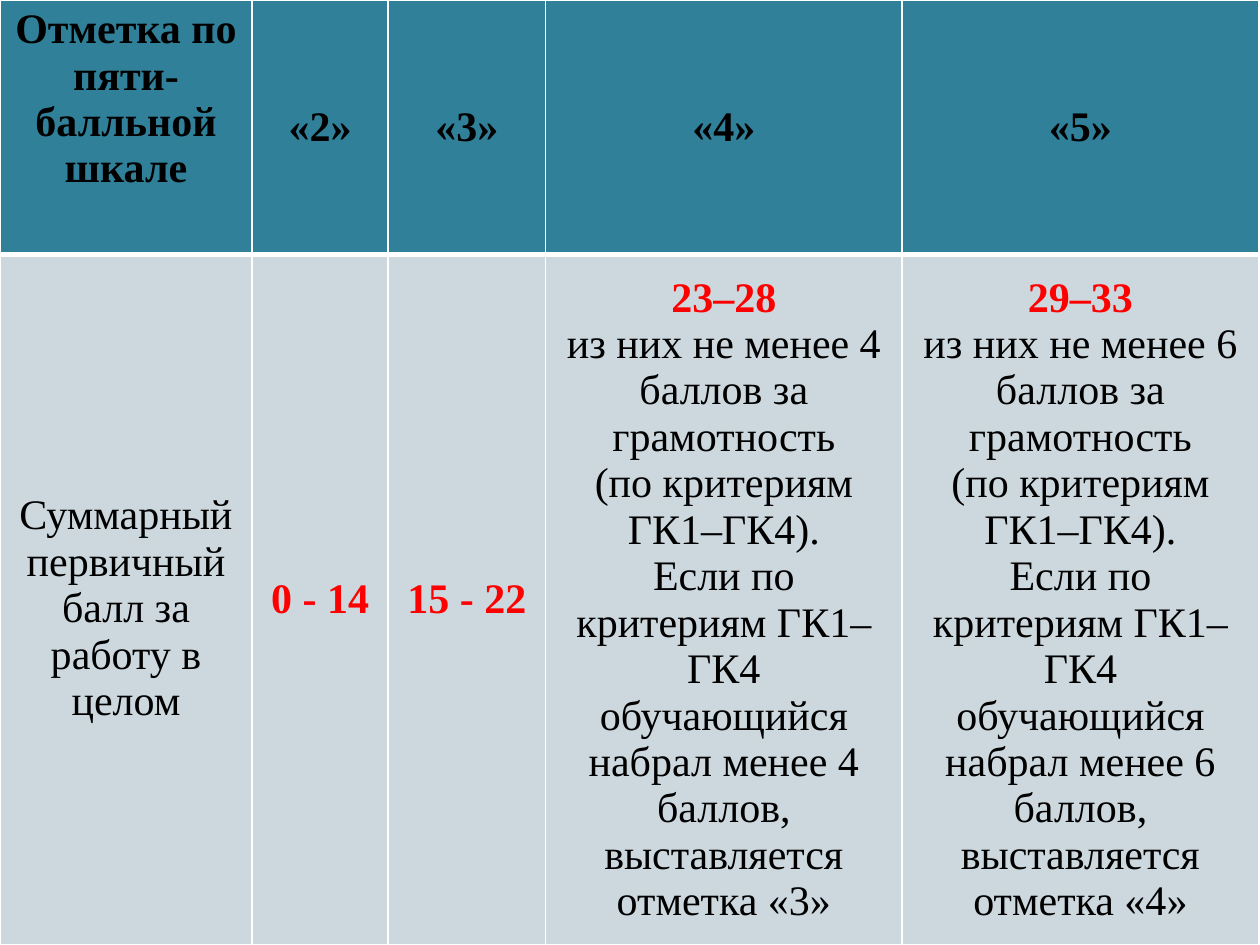
from lxml import etree
from pptx import Presentation
from pptx import util as u
from pptx.dml.color import RGBColor
from pptx.enum import text
from pptx.oxml import ns

BLACK, RED, WHITE = "000000", "FF0000", "FFFFFF"
HEADER_FILL, BODY_FILL = "308099", "CDD8DE"
COLUMNS = [2, 1.08, 1.25, 2.83, 2.83]
ROWS = [2.02, 5.48]


def colour(value):
    return RGBColor.from_string(value)


class GradePage:
    """Holds the table style and the current slide."""

    font, size = "Times New Roman", 24

    def __init__(self, deck):
        self.page = deck.slides.add_slide(deck.slide_layouts[6])

    def table(self, columns, rows):
        frame = self.page.shapes.add_table(
            len(rows), len(columns), 0, 0, u.Inches(sum(columns)), u.Inches(sum(rows))
        )
        table = frame.table
        table.horz_banding = False
        for column, width in zip(table.columns, columns):
            column.width = u.Inches(width)
        for row, height in zip(table.rows, rows):
            row.height = u.Inches(height)
        return table

    def borders(self, cell, **widths):
        properties = cell._tc.get_or_add_tcPr()
        for index, side in enumerate("LRTB"):
            line = etree.Element(ns.qn(f"a:ln{side}"), w=str(u.Pt(widths.get(side, 1))))
            fill = etree.SubElement(line, ns.qn("a:solidFill"))
            etree.SubElement(fill, ns.qn("a:srgbClr"), val=WHITE)
            properties.insert(index, line)

    def cell(self, cell, lines, fill, top=None):
        cell.fill.solid()
        cell.fill.fore_color.rgb = colour(fill)
        if top is None:
            cell.vertical_anchor = text.MSO_ANCHOR.MIDDLE
        else:
            cell.vertical_anchor = text.MSO_ANCHOR.TOP
            cell.margin_top = u.Inches(top)
        frame = cell.text_frame
        for index, (words, ink, bold) in enumerate(lines):
            para = frame.add_paragraph() if index else frame.paragraphs[0]
            para.alignment = text.PP_ALIGN.CENTER
            span = para.add_run()
            span.text = words
            span.font.name, span.font.size = self.font, u.Pt(self.size)
            span.font.bold = bold
            span.font.color.rgb = colour(ink)


def styled(lines, ink=BLACK, bold=False):
    return [(line, ink, bold) for line in lines]


def score(points, minimum, lower_grade):
    return styled([points], RED, True) + styled([
        f"из них не менее {minimum} баллов за грамотность",
        "(по критериям ГК1–ГК4).",
        "Если по критериям ГК1–ГК4",
        f"обучающийся набрал менее {minimum}",
        f"баллов, выставляется отметка «{lower_grade}»",
    ])


def main():
    deck = Presentation()
    deck.slide_width, deck.slide_height = u.Inches(10), u.Inches(7.5)
    page = GradePage(deck)
    table = page.table(COLUMNS, ROWS)

    header = [["Отметка по", "пяти-балльной", "шкале"], ["«2»"], ["«3»"], ["«4»"], ["«5»"]]
    body = [
        styled(["Суммарный", "первичный балл за", "работу в целом"]),
        styled(["0 - 14"], RED, True),
        styled(["15 - 22"], RED, True),
        score("23–28", 4, 3),
        score("29–33", 6, 4),
    ]
    for index, (title, lines) in enumerate(zip(header, body)):
        title_cell, body_cell = table.cell(0, index), table.cell(1, index)
        first = index == 0
        page.cell(title_cell, styled(title, bold=True), HEADER_FILL, 0.05 if first else None)
        page.cell(body_cell, lines, BODY_FILL, 1.89 if first else None)
        page.borders(title_cell, B=3)
        page.borders(body_cell, T=3)

    deck.save("out.pptx")


if __name__ == "__main__":
    main()
